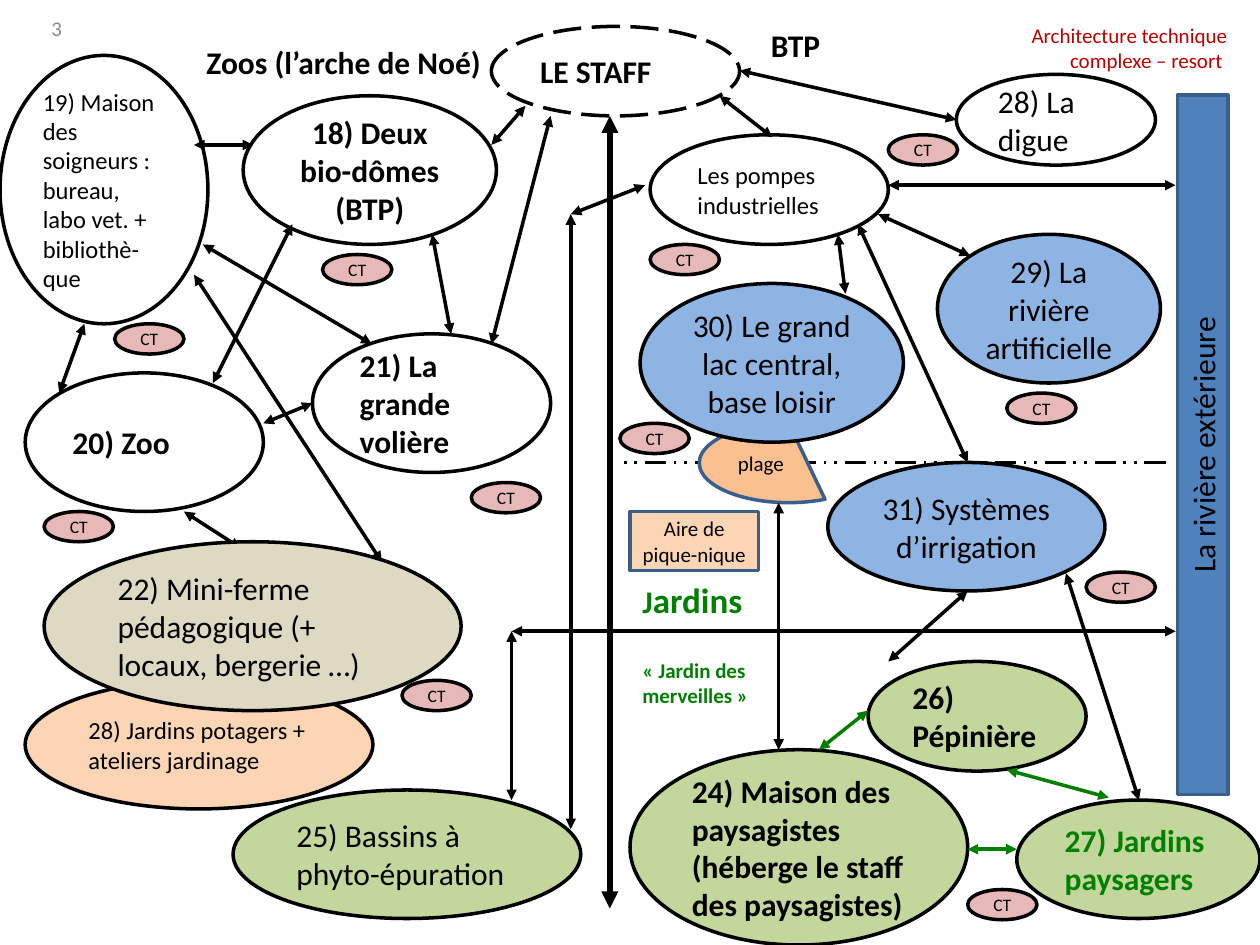
from dataclasses import dataclass
from typing import Any

from pptx import Presentation
from pptx import util as u
from pptx.dml.color import RGBColor
from pptx.enum import dml, shapes, text
from pptx.oxml.ns import qn
from lxml import etree

BLACK = RGBColor(0x00, 0x00, 0x00)
GREY = RGBColor(0x8C, 0x8C, 0x8C)
RED = RGBColor(0xC0, 0x00, 0x00)
GREEN = RGBColor(0x00, 0x80, 0x00)
LEAF = RGBColor(0xC3, 0xD6, 0x9B)
WATER = RGBColor(0x8E, 0xB4, 0xE3)
RIVER = RGBColor(0x4F, 0x81, 0xBD)
EDGE = RGBColor(0x3A, 0x5F, 0x8C)
PINK = RGBColor(0xE6, 0xB9, 0xB8)
SAND = RGBColor(0xFA, 0xC0, 0x90)
PEACH = RGBColor(0xFC, 0xD5, 0xB5)
EARTH = RGBColor(0xDD, 0xD9, 0xC3)

OVAL = shapes.MSO_SHAPE.OVAL
LEFT, CENTER, RIGHT = text.PP_ALIGN.LEFT, text.PP_ALIGN.CENTER, text.PP_ALIGN.RIGHT
COLUMNS, ROWS = 100, 75
SLIDE_WIDTH, SLIDE_HEIGHT = u.Inches(10), u.Inches(7.5)


@dataclass
class Region:
    """Part of the page; lengths are grid columns and rows from its corner."""
    page: Any
    left: float
    top: float

    def point(self, column, row):
        return (round((self.left + column) * SLIDE_WIDTH / COLUMNS),
                round((self.top + row) * SLIDE_HEIGHT / ROWS))

    def box(self, column, row, width, height):
        return (*self.point(column, row), round(width * SLIDE_WIDTH / COLUMNS),
                round(height * SLIDE_HEIGHT / ROWS))


def write(frame, spans, align=LEFT, color=BLACK, bold=False):
    para = frame.paragraphs[0]
    para.alignment = align
    for words, size in spans:
        span = para.add_run()
        span.text = words
        span.font.name = "Calibri"
        span.font.size = u.Pt(size)
        span.font.bold = bold
        span.font.color.rgb = color


def add_place(region, words, place, fill=None, size=18, bold=False, align=LEFT,
              color=BLACK, kind=OVAL, edge=BLACK):
    shape = region.page.shapes.add_shape(kind, *region.box(*place))
    shape.shadow.inherit = False
    if fill is None:
        shape.fill.background()
    else:
        shape.fill.solid()
        shape.fill.fore_color.rgb = fill
    shape.line.color.rgb = edge
    shape.line.width = u.Pt(2)
    shape.text_frame.vertical_anchor = text.MSO_ANCHOR.MIDDLE
    write(shape.text_frame, [(words, size)], align, color, bold)
    return shape


def add_label(region, spans, place, wrap=False, anchor=text.MSO_ANCHOR.TOP, **style):
    frame = region.page.shapes.add_textbox(*region.box(*place)).text_frame
    frame.word_wrap = wrap
    frame.vertical_anchor = anchor
    write(frame, spans, **style)


def add_line(region, ends, color=BLACK, width=2, dash=None):
    """A solid line is a two-way arrow; a dashed one has bare ends."""
    line = region.page.shapes.add_connector(
        shapes.MSO_CONNECTOR.STRAIGHT, *region.point(*ends[:2]), *region.point(*ends[2:]))
    line.line.color.rgb = color
    line.line.width = u.Pt(width)
    if dash:
        line.line.dash_style = dash
    else:
        outline = line._element.spPr.find(qn("a:ln"))
        for end in ("a:headEnd", "a:tailEnd"):
            etree.SubElement(outline, qn(end), type="triangle")
    etree.SubElement(line._element.spPr, qn("a:effectLst"))


def add_lines(region, all_ends, color=BLACK):
    for ends in all_ends:
        add_line(region, ends, color)


def add_tags(region, corners):
    for column, row in corners:
        add_place(region, "CT", (column, row, 5.5, 2.4), PINK, 10, align=CENTER)


def build_header(region):
    add_label(region, [("3", 12)], (1.2, 0, 4.7, 4.4), wrap=True,
              anchor=text.MSO_ANCHOR.MIDDLE, align=RIGHT, color=GREY)
    add_label(region, [("Zoos (l’arche de Noé)", 18)], (15.4, 2.9, 24, 4), bold=True)
    add_label(region, [("BTP", 18)], (60.2, 1.6, 6, 4), bold=True)
    add_label(region, [("Architecture technique complexe – resort ", 12)],
              (79.1, 1.3, 19.3, 5), wrap=True, align=RIGHT, color=RED)
    staff = add_place(region, "LE STAFF", (39, 2.1, 19.7, 7.1), bold=True)
    staff.line.dash_style = dml.MSO_LINE.LONG_DASH


def build_zoo(region):
    add_place(region, "20) Zoo", (2, 29.6, 18.9, 11), bold=True)
    add_place(region, "18) Deux bio-dômes (BTP)", (19.3, 7.6, 20.1, 11.8),
              bold=True, align=CENTER)
    add_place(region, "19) Maison des soigneurs : bureau, labo vet. + bibliothè-que",
              (0, 4.4, 16.5, 21.3), size=14)
    add_place(region, "21) La grande volière", (24.8, 26.5, 18.9, 11), bold=True)
    add_lines(region, [
        (41.7, 8.4, 39, 11.5), (43.7, 9.2, 39, 27.3), (34.3, 18.6, 35.8, 26.5),
        (23.2, 17.8, 16.9, 30.4), (20.1, 11.5, 15.4, 11.5), (6.7, 25.7, 4.7, 31.2),
        (20.9, 33.6, 24.8, 32), (14.6, 40.6, 19.1, 43.5), (15.4, 21.8, 30.3, 44.6),
        (16.1, 19.4, 29.5, 27.3)])
    add_tags(region, [(37.4, 38.3), (3.5, 40.6), (31.9, 54), (25.6, 20.2), (9.1, 25.7)])
    # Farm and kitchen gardens, in front of the arrows
    add_place(region, "25) Bassins à phyto-épuration", (18.5, 62.7, 27.6, 10.2), LEAF)
    add_place(region, "28) Jardins potagers + ateliers jardinage",
              (2, 54, 27.6, 10.2), PEACH, 14)
    add_place(region, "22) Mini-ferme pédagogique (+ locaux, bergerie …)",
              (3.5, 43, 33.1, 13.4), EARTH)


def build_water(region):
    add_place(region, "28) La digue", (25.9, 5.9, 15.8, 7.2))
    river = add_place(region, "La rivière extérieure", (17.7, 33.3, 55.5, 4), RIVER,
                      align=CENTER, kind=shapes.MSO_SHAPE.RECTANGLE, edge=EDGE)
    river.rotation = 270
    add_place(region, "29) La rivière artificielle", (24.4, 18.6, 17.7, 11.8),
              WATER, align=CENTER)
    add_place(region, "Les pompes industrielles", (1.6, 10.7, 18.9, 8.7), size=14)
    add_lines(region, [
        (43.3, 14.7, 20.5, 14.7), (16.5, 18.6, 17.1, 23.3), (7.1, 7.6, 11.3, 10.9),
        (18.1, 17.8, 26.8, 36.7), (8.7, 5.6, 25.9, 9.5), (19.7, 17, 27, 20.3)])
    # Border between lake and gardens
    add_line(region, (42.5, 36.7, -0.8, 36.7), width=1.5,
             dash=dml.MSO_LINE.DASH_DOT_DOT)
    add_tags(region, [(1.6, 19.4), (20.5, 10.7), (29.9, 31.2), (-0.8, 33.6)])
    # Beach, partly behind the lake
    add_place(region, "plage", (5.5, 33.6, 14.2, 6.3), SAND, 12,
              kind=shapes.MSO_SHAPE.CHORD, edge=EDGE)
    add_place(region, "30) Le grand lac central, base loisir", (0.8, 22.5, 20.9, 12.6),
              WATER, align=CENTER)


def build_gardens(region):
    add_place(region, "27) Jardins paysagers", (30.7, 26.8, 19.3, 9.4), LEAF,
              bold=True, color=GREEN)
    add_place(region, "31) Systèmes d’irrigation", (15.7, 0, 22, 10.2), WATER, align=CENTER)
    add_place(region, "24) Maison des paysagistes (héberge le staff des paysagistes)",
              (0, 22.8, 26.8, 15.5), LEAF, bold=True)
    add_place(region, "26) Pépinière", (18.9, 15.8, 17.3, 8.7), LEAF, bold=True)
    add_lines(region, [(34.6, 8.8, 40.4, 26.8), (11.8, 3.2, 11.8, 22.8),
                       (26.8, 10.2, 20.5, 15.8)])
    add_lines(region, [(18.9, 19.7, 15, 22.8), (29.9, 24.4, 38, 26.6),
                       (30.7, 30.7, 26.8, 30.7)], GREEN)
    add_tags(region, [(36.2, 8.7), (26.8, 33.9)])
    add_label(region, [("J", 18), ("ardins", 20)], (0, 8.7, 10, 4.4), bold=True, color=GREEN)
    add_label(region, [("«\u00a0Jardin des merveilles\u00a0»", 12)], (0, 15, 11, 5),
              wrap=True, bold=True, color=GREEN)
    add_place(region, "Aire de pique-nique", (0, 3.9, 10.2, 4.7), PEACH, 12,
              align=CENTER, kind=shapes.MSO_SHAPE.RECTANGLE, edge=EDGE)


def build_circulation(region):
    add_line(region, (8.4, 9.2, 8.4, 72.1), width=3.25)
    add_lines(region, [(11.2, 14.7, 5.3, 17), (5.3, 17, 5.3, 65.8),
                       (53.3, 50.1, 0.6, 50.1), (0.6, 50.1, 0.6, 63.5)])


def main():
    deck = Presentation()
    deck.slide_width, deck.slide_height = SLIDE_WIDTH, SLIDE_HEIGHT
    page = deck.slides.add_slide(deck.slide_layouts[6])
    build_header(Region(page, 0, 0))
    build_zoo(Region(page, 0, 0))
    build_water(Region(page, 50, 0))
    build_gardens(Region(page, 50, 36.7))
    build_circulation(Region(page, 40, 0))
    deck.save("out.pptx")


if __name__ == "__main__":
    main()
